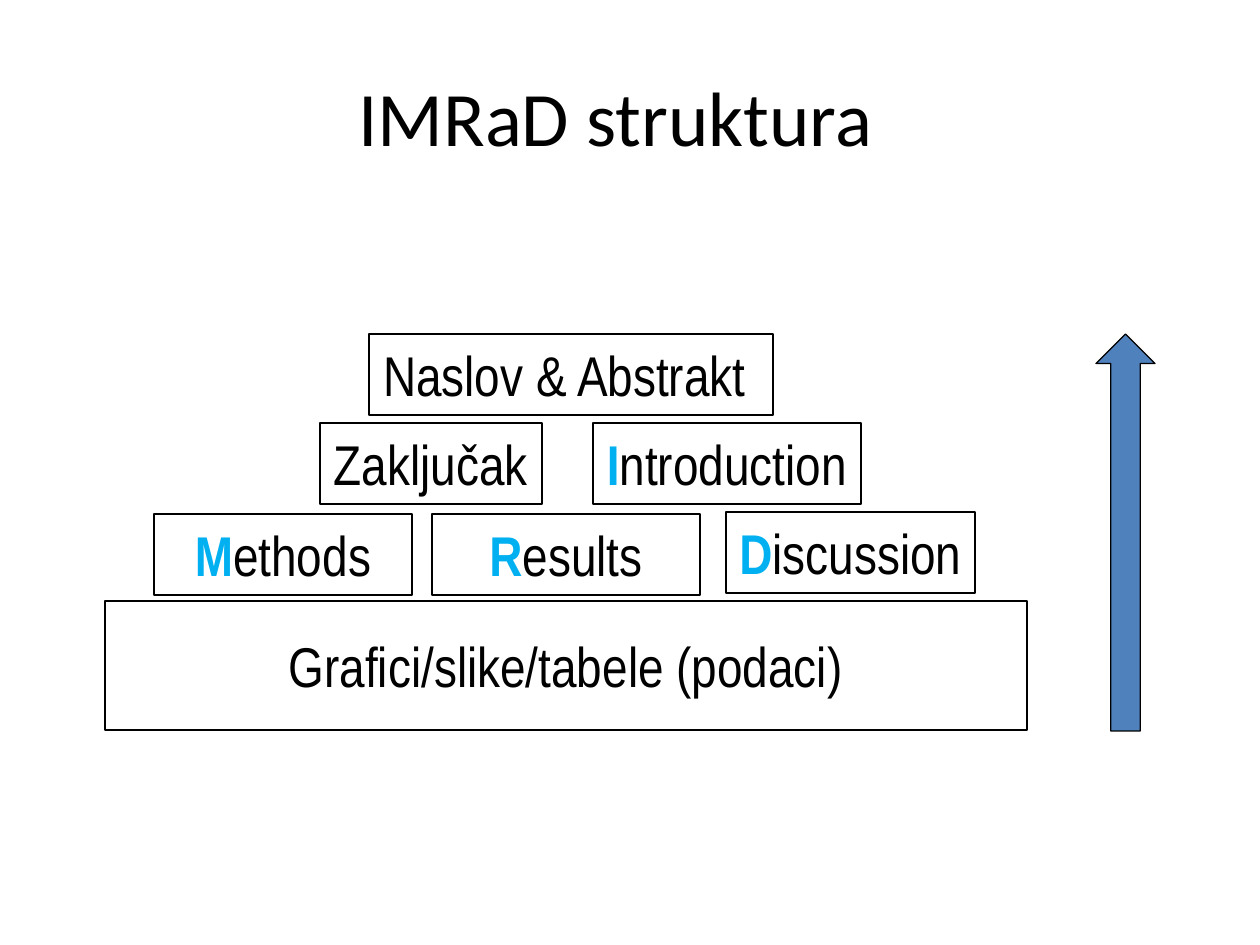
from pptx import Presentation
from pptx.dml.color import RGBColor
from pptx.enum.shapes import MSO_SHAPE
from pptx.enum.text import MSO_ANCHOR, MSO_AUTO_SIZE, PP_ALIGN
from pptx.util import Pt

EMU_PER_PX = 914400 / 126
SLIDE_SIZE = (1260, 945)

BLACK = RGBColor(0x00, 0x00, 0x00)
INITIAL_BLUE = RGBColor(0x00, 0xB0, 0xF0)
ARROW_BLUE = RGBColor(0x4F, 0x81, 0xBD)

TITLE = "IMRaD struktura"
TITLE_AREA = (35, 26, 1196, 179)
TITLE_RIGHT_INSET = 48

BLOCK_HEIGHT = 81
# blue initial, rest of the label, left, top, width, wraps
BLOCKS = [
    ("M", "ethods", 154, 514, 258, True),
    ("R", "esults", 432, 514, 268, True),
    ("D", "iscussion", 726, 512, 249, False),
    ("", "Zaključak", 320, 423, 222, False),
    ("I", "ntroduction", 593, 423, 268, False),
    ("", "Naslov & Abstrakt ", 369, 334, 404, False),
]
BASE = "Grafici/slike/tabele (podaci)"
BASE_AREA = (105, 601, 922, 129)
ARROW_AREA = (1096, 334, 59, 397)

LABEL_FORMAT = {"name": "Arial Narrow", "size": Pt(32)}
TITLE_FORMAT = {"name": "Calibri", "size": Pt(44), "bold": False}


def px(length):
    return round(length * EMU_PER_PX)


def apply_format(target, values):
    for attribute, value in values.items():
        setattr(target, attribute, value)


def add_outlined(slide, kind, area, fill=None):
    shape = slide.shapes.add_shape(kind, *map(px, area))
    shape.shadow.inherit = False
    if fill is None:
        shape.fill.background()
    else:
        shape.fill.solid()
        shape.fill.fore_color.rgb = fill
    shape.line.color.rgb = BLACK
    shape.line.width = Pt(0.75)
    return shape


def add_block(slide, initial, rest, area, frame_format):
    frame = add_outlined(slide, MSO_SHAPE.RECTANGLE, area).text_frame
    apply_format(frame, frame_format)
    label = frame.paragraphs[0]
    label.alignment = PP_ALIGN.CENTER
    for text, color, bold in ((initial, INITIAL_BLUE, True), (rest, BLACK, False)):
        if text:
            run = label.add_run()
            run.text = text
            apply_format(run.font, {**LABEL_FORMAT, "bold": bold})
            run.font.color.rgb = color


def add_title(slide):
    title = slide.shapes.title
    apply_format(title, dict(zip(("left", "top", "width", "height"), map(px, TITLE_AREA))))
    frame = title.text_frame
    frame.text = TITLE
    apply_format(frame, {"vertical_anchor": MSO_ANCHOR.MIDDLE,
                         "margin_right": px(TITLE_RIGHT_INSET)})
    heading = frame.paragraphs[0]
    heading.alignment = PP_ALIGN.CENTER
    font = heading.runs[0].font
    apply_format(font, TITLE_FORMAT)
    font.color.rgb = BLACK


def main():
    deck = Presentation()
    deck.slide_width, deck.slide_height = map(px, SLIDE_SIZE)
    slide = deck.slides.add_slide(deck.slide_layouts.get_by_name("Title Only"))

    add_title(slide)
    for initial, rest, left, top, width, wraps in BLOCKS:
        add_block(slide, initial, rest, (left, top, width, BLOCK_HEIGHT),
                  {"word_wrap": wraps, "vertical_anchor": MSO_ANCHOR.TOP,
                   "auto_size": MSO_AUTO_SIZE.SHAPE_TO_FIT_TEXT})
    add_block(slide, "", BASE, BASE_AREA,
              {"word_wrap": False, "vertical_anchor": MSO_ANCHOR.MIDDLE})
    add_outlined(slide, MSO_SHAPE.UP_ARROW, ARROW_AREA, ARROW_BLUE)

    deck.save("out.pptx")


if __name__ == "__main__":
    main()
